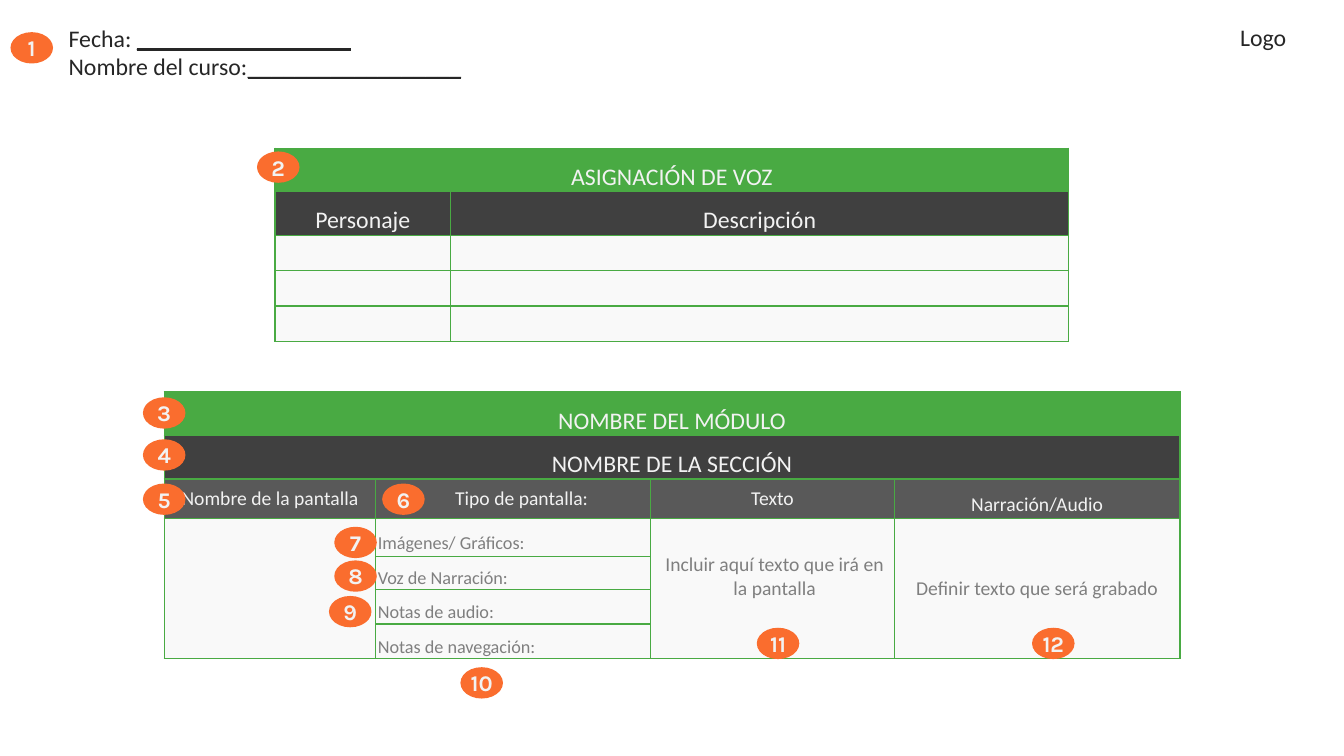
from lxml.etree import SubElement
from pptx import Presentation
from pptx.dml.color import RGBColor
from pptx.enum.shapes import MSO_SHAPE
from pptx.enum.text import MSO_ANCHOR, MSO_AUTO_SIZE, PP_ALIGN
from pptx.oxml.ns import qn
from pptx.util import Pt

COLORS = {
    "green": "49AA43", "dark": "404040", "gray": "595959", "pale": "F9F9F9",
    "orange": "FA6D2E", "light": "F2F2F2", "ink": "262626", "muted": "7F7F7F",
}
BADGE_W, BADGE_H = 30.4, 22.4
# Left and top of each numbered badge, in order
BADGES = [
    (7.5, 23), (183.6, 108.2), (102.1, 283.8), (102.1, 313.8),
    (102.1, 345.4), (273, 345.4), (238.8, 376.3), (238.8, 400.3),
    (235, 425.7), (328.9, 476.6), (540.6, 448.4), (737.2, 448.4),
]


def rgb(name):
    return RGBColor.from_string(COLORS[name])


def style_run(r, size, color, font="Calibri", bold=False):
    r.font.size = Pt(size)
    r.font.name = font
    r.font.bold = bold
    r.font.color.rgb = rgb(color)


def add_border(cell):
    tcPr = cell._tc.get_or_add_tcPr()
    for side in ("a:lnL", "a:lnR", "a:lnT", "a:lnB"):
        ln = SubElement(tcPr, qn(side), w=str(Pt(1)))
        fill = SubElement(ln, qn("a:solidFill"))
        SubElement(fill, qn("a:srgbClr"), val=COLORS["green"])


def add_grid(slide, left, top, widths, heights, row_fills, margin):
    frame = slide.shapes.add_table(len(heights), len(widths), Pt(left), Pt(top),
                                   Pt(sum(widths)), Pt(sum(heights)))
    table = frame.table
    table.first_row = table.horz_banding = False
    for column, width in zip(table.columns, widths):
        column.width = Pt(width)
    for row, height, color in zip(table.rows, heights, row_fills):
        row.height = Pt(height)
        for cell in row.cells:
            add_border(cell)
            cell.fill.solid()
            cell.fill.fore_color.rgb = rgb(color)
            cell.margin_left = cell.margin_right = Pt(margin)
            cell.margin_top = cell.margin_bottom = 0
            cell.vertical_anchor = MSO_ANCHOR.MIDDLE
    return table


def write_cell(cell, text, size=17, color="light", spacing=1.5, align=PP_ALIGN.CENTER):
    p = cell.text_frame.paragraphs[0]
    p.text = text
    p.alignment = align
    p.line_spacing = spacing
    style_run(p.runs[0], size, color)


def add_header(slide):
    # Date and course, each with a line to fill in
    title = slide.shapes.title
    title.left, title.top, title.width, title.height = Pt(41.8), Pt(13), Pt(491), Pt(48.5)
    tf = title.text_frame
    tf.auto_size = MSO_AUTO_SIZE.NONE
    tf.vertical_anchor = MSO_ANCHOR.TOP
    for i, label in enumerate(("Fecha: ", "Nombre del curso:")):
        p = tf.add_paragraph() if i else tf.paragraphs[0]
        p.alignment = PP_ALIGN.LEFT
        for text in (label, "_" * 18):
            r = p.add_run()
            r.text = text
            style_run(r, 17, "ink")
            r.font.underline = text != label

    # Place for the logo
    tf = slide.shapes.add_textbox(Pt(510.5), Pt(13), Pt(415.4), Pt(28)).text_frame
    tf.word_wrap = True
    p = tf.paragraphs[0]
    p.text = "Logo"
    p.alignment = PP_ALIGN.RIGHT
    style_run(p.runs[0], 17, "ink")


def add_voice_table(slide):
    table = add_grid(slide, 196.5, 105.8, [125.3, 441.7], [31.1] * 2 + [25.3] * 3,
                     ["green", "dark"] + ["pale"] * 3, 7.2)
    table.cell(0, 0).merge(table.cell(0, 1))
    write_cell(table.cell(0, 0), "ASIGNACIÓN DE VOZ")
    for col, text in enumerate(("Personaje", "Descripción")):
        write_cell(table.cell(1, col), text)


def add_module_table(slide):
    table = add_grid(slide, 117.2, 280, [151.3, 196.3, 174.1, 204],
                     [31.1, 31.1, 28.1, 27.1, 23.8, 24.6, 24.6],
                     ["green", "dark", "gray"] + ["pale"] * 4, 1.4)
    # Module and section bands
    for row, text in enumerate(("NOMBRE DEL MÓDULO", "NOMBRE DE LA SECCIÓN")):
        table.cell(row, 0).merge(table.cell(row, 3))
        write_cell(table.cell(row, 0), text)

    # Column headings
    headings = ("Nombre de la pantalla", "Tipo de pantalla:", "Texto", "Narración/Audio")
    for col, text in enumerate(headings):
        write_cell(table.cell(2, col), text, 14, spacing=1.5 if col == 3 else 1)
    table.cell(2, 1).margin_left = Pt(13.4)

    # Screen contents
    for col in (0, 2, 3):
        table.cell(3, col).merge(table.cell(6, col))
    notes = ("Imágenes/ Gráficos:", "Voz de Narración:", "Notas de audio:",
             "Notas de navegación:")
    for row, text in enumerate(notes, 3):
        write_cell(table.cell(row, 1), text, 13, "muted", align=PP_ALIGN.LEFT)
    screen_text = table.cell(3, 2)
    write_cell(screen_text, "Incluir aquí texto que irá en la pantalla", 14, "muted", 1)
    screen_text.margin_left, screen_text.margin_right = Pt(8), Pt(5)
    screen_text.margin_bottom = Pt(17)
    write_cell(table.cell(3, 3), "Definir texto que será grabado", 14, "muted", 1)


def add_badge(slide, number, left, top):
    sp = slide.shapes.add_shape(MSO_SHAPE.OVAL, Pt(left), Pt(top), Pt(BADGE_W), Pt(BADGE_H))
    sp.shadow.inherit = False
    sp.fill.solid()
    sp.fill.fore_color.rgb = rgb("orange")
    sp.line.fill.background()
    tf = sp.text_frame
    tf.margin_left = tf.margin_right = tf.margin_top = tf.margin_bottom = 0
    tf.word_wrap = False
    tf.vertical_anchor = MSO_ANCHOR.MIDDLE
    p = tf.paragraphs[0]
    p.text = str(number)
    p.alignment = PP_ALIGN.CENTER
    style_run(p.runs[0], 16, "light", "Karla", True)


def main():
    prs = Presentation()
    prs.slide_width, prs.slide_height = Pt(960), Pt(540)
    slide = prs.slides.add_slide(prs.slide_layouts[5])
    add_header(slide)
    add_voice_table(slide)
    add_module_table(slide)
    for number, (left, top) in enumerate(BADGES, 1):
        add_badge(slide, number, left, top)
    prs.save("out.pptx")


if __name__ == "__main__":
    main()
